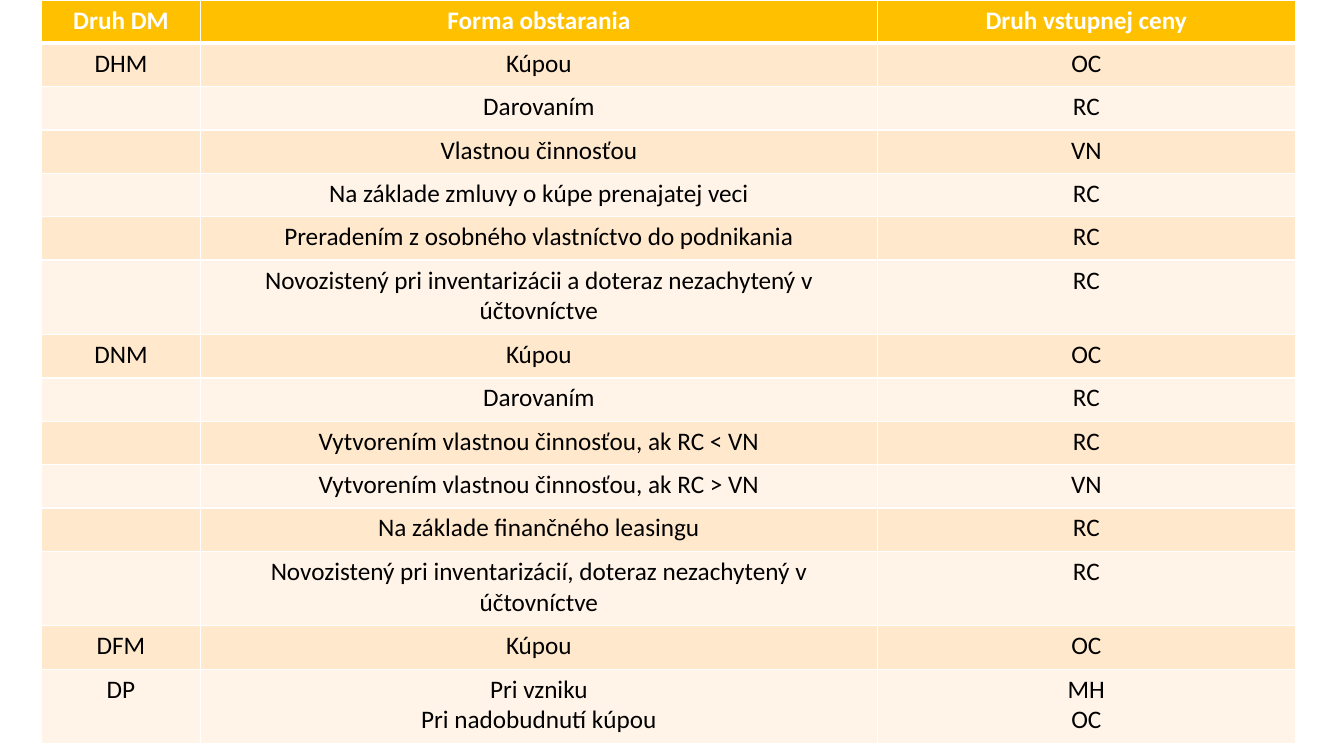
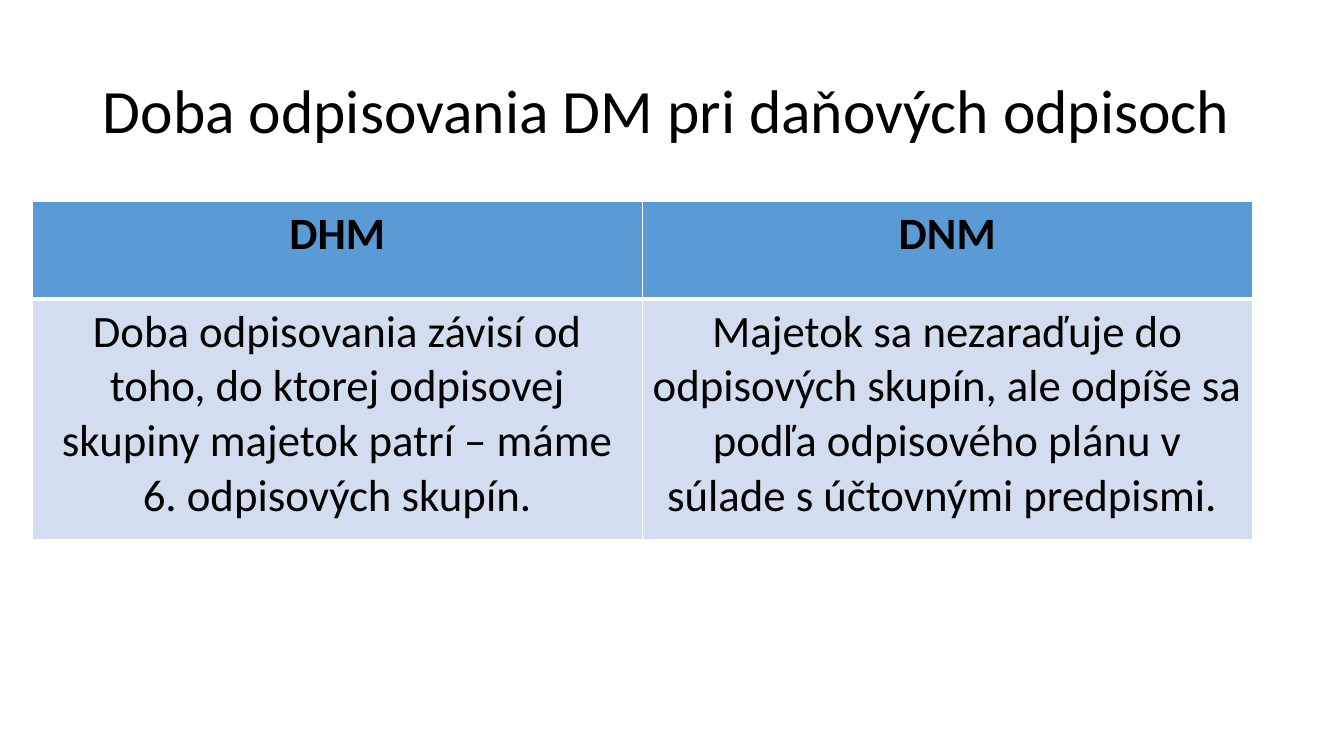
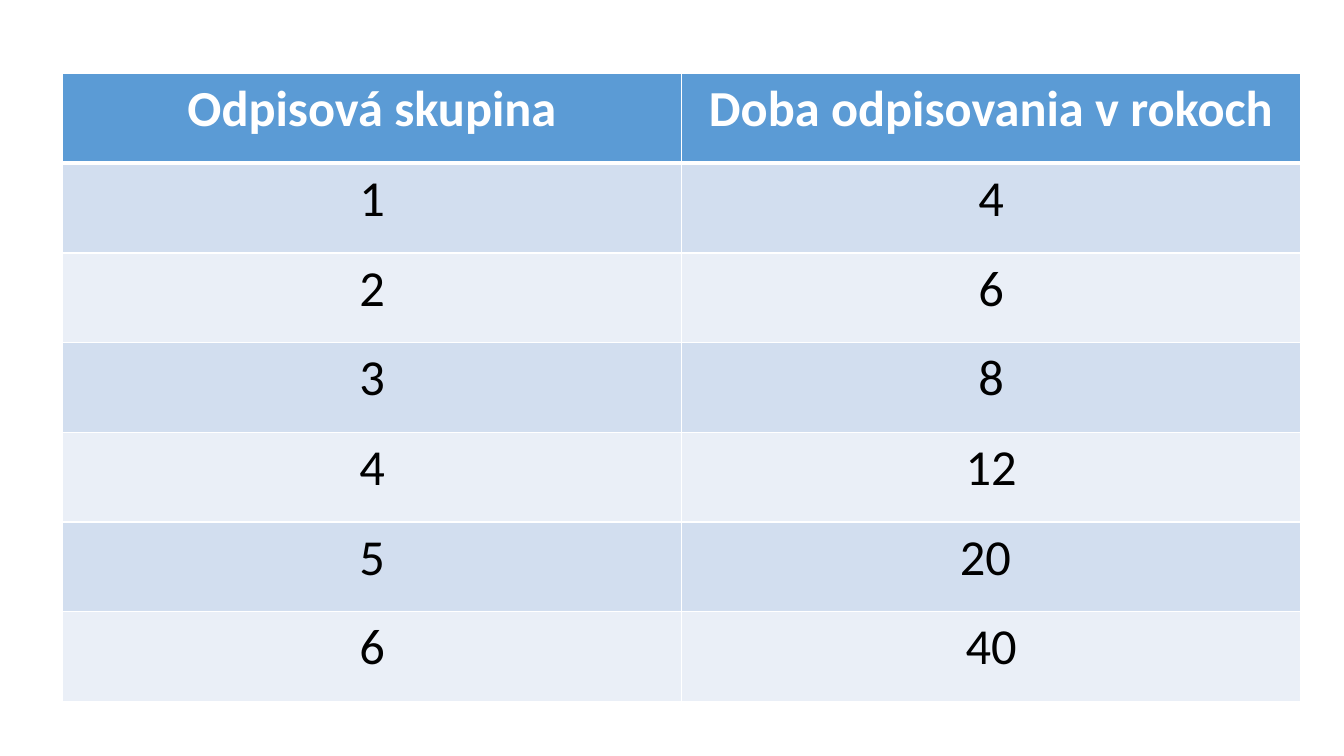
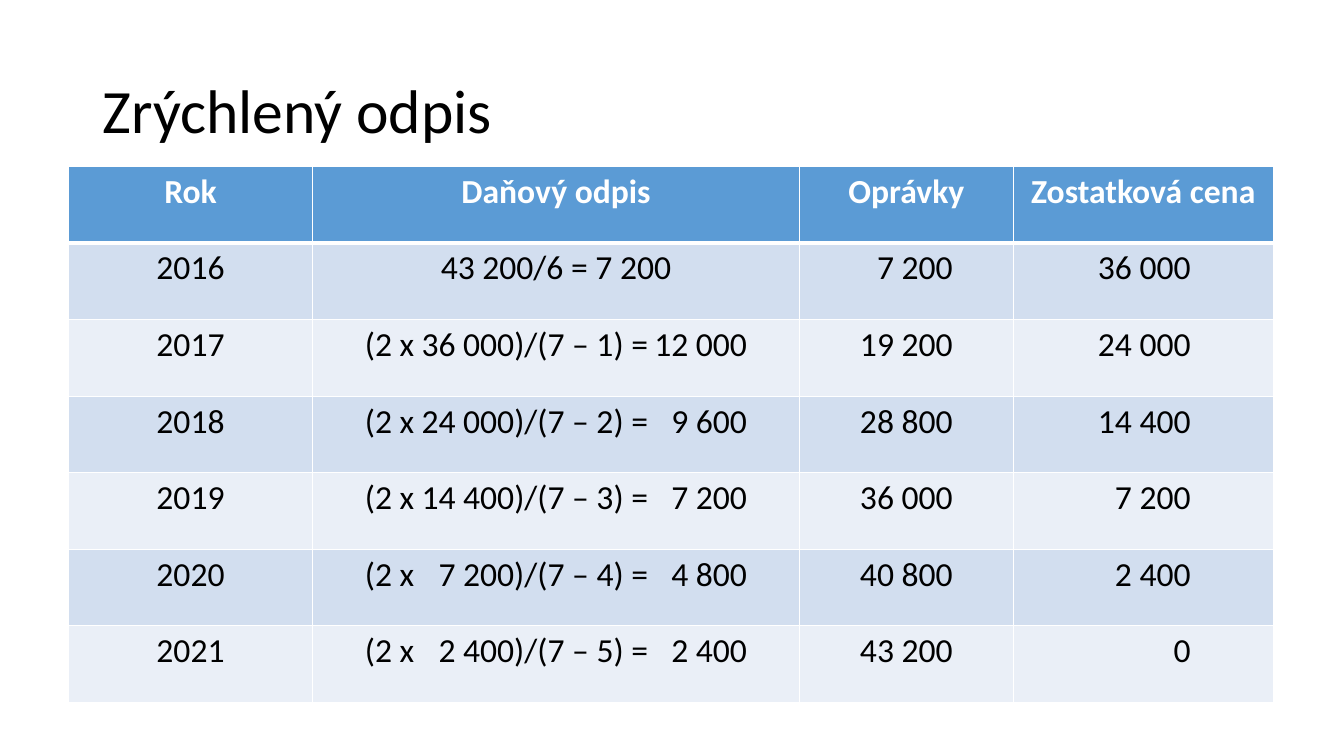
from lxml.etree import SubElement
from pptx import Presentation
from pptx.dml.color import RGBColor
from pptx.enum.text import MSO_ANCHOR, PP_ALIGN
from pptx.oxml.ns import qn
from pptx.util import Pt

PX = 9144  # 100 px to the inch
FONT = "Calibri"
WHITE, BLACK = "FFFFFF", "000000"
GOLD_THEME = ("FFC000", "FFE8CC", "FFF4E7")  # header, odd rows, even rows
BLUE_THEME = ("5B9BD5", "D2DEEF", "EAEFF7")


def color(value):
    return RGBColor.from_string(value)


def style_cell(cell, fill, text_color, size, bold, borders):
    """Format a cell; borders gives the width in points of each edge."""
    properties = cell._tc.get_or_add_tcPr()
    for edge, width in borders.items():
        line = SubElement(properties, qn(f"a:{edge}"), w=str(Pt(width)))
        SubElement(SubElement(line, qn("a:solidFill")), qn("a:srgbClr"), val=WHITE)
    cell.fill.solid()
    cell.fill.fore_color.rgb = color(fill)
    for paragraph in cell.text_frame.paragraphs:
        paragraph.alignment = PP_ALIGN.CENTER
        paragraph.font.size = Pt(size)
        for run in paragraph.runs:
            run.font.name = FONT
            run.font.size = Pt(size)
            run.font.bold = bold
            run.font.color.rgb = color(text_color)


acquisition_rows = [
    ("Druh DM", "Forma obstarania", "Druh vstupnej ceny"),
    ("DHM", "Kúpou", "OC"),
    ("", "Darovaním", "RC"),
    ("", "Vlastnou činnosťou", "VN"),
    ("", "Na základe zmluvy o kúpe prenajatej veci", "RC"),
    ("", "Preradením z osobného vlastníctvo do podnikania", "RC"),
    ("", "Novozistený pri inventarizácii a doteraz nezachytený v účtovníctve", "RC"),
    ("DNM", "Kúpou", "OC"),
    ("", "Darovaním", "RC"),
    ("", "Vytvorením vlastnou činnosťou, ak RC < VN", "RC"),
    ("", "Vytvorením vlastnou činnosťou, ak RC > VN", "VN"),
    ("", "Na základe finančného leasingu", "RC"),
    ("", "Novozistený pri inventarizácií, doteraz nezachytený v účtovníctve", "RC"),
    ("DFM", "Kúpou", "OC"),
    ("DP", "Pri vzniku\nPri nadobudnutí kúpou", "MH\nOC"),
]
period_rows = [
    ("DHM", "DNM"),
    (
        "Doba odpisovania závisí od toho, do ktorej odpisovej skupiny majetok "
        "patrí – máme 6. odpisových skupín.",
        "Majetok sa nezaraďuje do odpisových skupín, ale odpíše sa podľa "
        "odpisového plánu v súlade s účtovnými predpismi. ",
    ),
]
group_rows = [
    ("Odpisová skupina", "Doba odpisovania v rokoch"),
    ("1", "4"),
    ("2", "6"),
    ("3", "8"),
    ("4", "12"),
    ("5", "20 "),
    ("6", "40"),
]
accelerated_rows = [
    ("Rok", "Daňový odpis", "Oprávky", "Zostatková cena"),
    ("2016", "43 200/6 = 7 200", "7 200", "36 000"),
    ("2017", "(2 x\t36 000)/(7 – 1) =\t12 000", "19 200", "24 000"),
    ("2018", "(2 x\t24 000)/(7 – 2) =\t9 600", "28 800", "14 400"),
    ("2019", "(2 x\t14 400)/(7 – 3) =\t7 200", "36 000", "7 200"),
    ("2020", "(2 x\t7 200)/(7 – 4) =\t4 800", "40 800", "2 400"),
    ("2021", "(2 x\t2 400)/(7 – 5) =\t2 400", "43 200", "0"),
]

# title, rows, left, top, column widths, row heights, theme, header text, size
slides = [
    (None, acquisition_rows, 41, 0, [158, 671, 415],
     [74 if index in (6, 12, 14) else 43 for index in range(15)],
     GOLD_THEME, WHITE, 18),
    ("Doba odpisovania DM pri daňových odpisoch", period_rows, 32, 200,
     [605, 605], [97, 238], BLUE_THEME, BLACK, 32),
    (None, group_rows, 62, 73, [614, 614], [89] * 7, BLUE_THEME, WHITE, 36),
    ("Zrýchlený odpis", accelerated_rows, 68, 165, [242, 483, 212, 258],
     [76] * 7, BLUE_THEME, WHITE, 24),
]

presentation = Presentation()
presentation.slide_width = 1333 * PX
presentation.slide_height = 750 * PX

for title, rows, left, top, widths, heights, theme, header_color, size in slides:
    slide = presentation.slides.add_slide(presentation.slide_layouts[6])
    if title:
        title_box = slide.shapes.add_textbox(92 * PX, 40 * PX, 1150 * PX, 145 * PX)
        title_frame = title_box.text_frame
        title_frame.word_wrap = True
        title_frame.vertical_anchor = MSO_ANCHOR.MIDDLE
        title_frame.text = title
        title_paragraph = title_frame.paragraphs[0]
        title_paragraph.line_spacing = 0.9
        title_font = title_paragraph.runs[0].font
        title_font.name = FONT
        title_font.size = Pt(44)
        title_font.color.rgb = color(BLACK)

    table = slide.shapes.add_table(
        len(rows), len(widths), left * PX, top * PX, sum(widths) * PX, sum(heights) * PX
    ).table
    table.horz_banding = False
    for column, width in zip(table.columns, widths):
        column.width = width * PX
    for row, height in zip(table.rows, heights):
        row.height = height * PX

    header_fill, odd_fill, even_fill = theme
    for row_index, texts in enumerate(rows):
        is_header = row_index == 0
        fill = header_fill if is_header else odd_fill if row_index % 2 else even_fill
        borders = {
            "lnL": 1,
            "lnR": 1,
            "lnT": 3 if row_index == 1 else 1,
            "lnB": 3 if is_header else 1,
        }
        for column_index, text in enumerate(texts):
            cell = table.cell(row_index, column_index)
            cell.text_frame.text = text
            text_color = header_color if is_header else BLACK
            style_cell(cell, fill, text_color, size, is_header, borders)

# Amounts of the last table line up on their right edges
for row_index in range(1, len(accelerated_rows)):
    for column_index, margin in ((2, 60), (3, 82)):
        cell = table.cell(row_index, column_index)
        cell.margin_right = margin * PX
        cell.text_frame.paragraphs[0].alignment = PP_ALIGN.RIGHT
    if row_index > 1:
        cell = table.cell(row_index, 1)
        cell.margin_left = 52 * PX
        paragraph = cell.text_frame.paragraphs[0]
        paragraph.alignment = PP_ALIGN.LEFT
        tab_list = SubElement(paragraph._p.get_or_add_pPr(), qn("a:tabLst"))
        for position in (281, 379):
            SubElement(tab_list, qn("a:tab"), pos=str(position * PX), algn="r")
        # Tab stops come before the default run properties
        default_font = paragraph._p.pPr.find(qn("a:defRPr"))
        default_font.addprevious(tab_list)

presentation.save("out.pptx")
